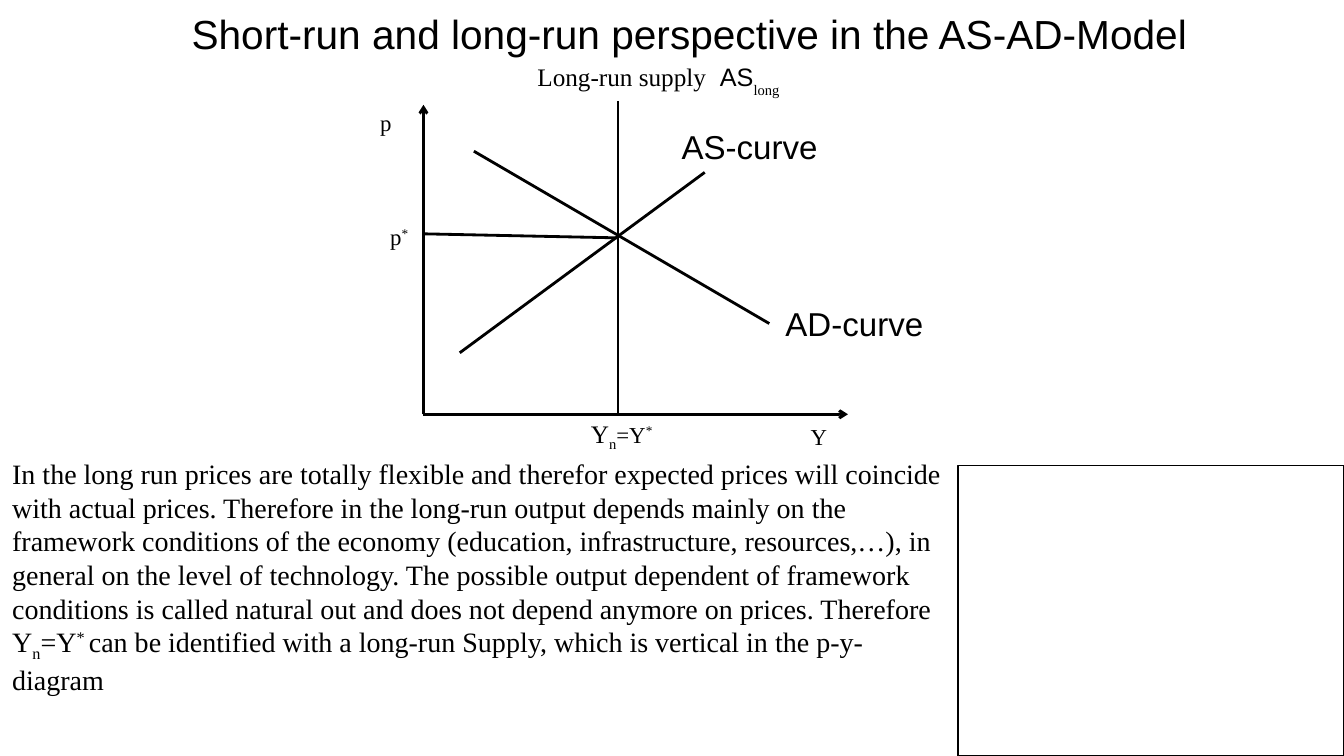
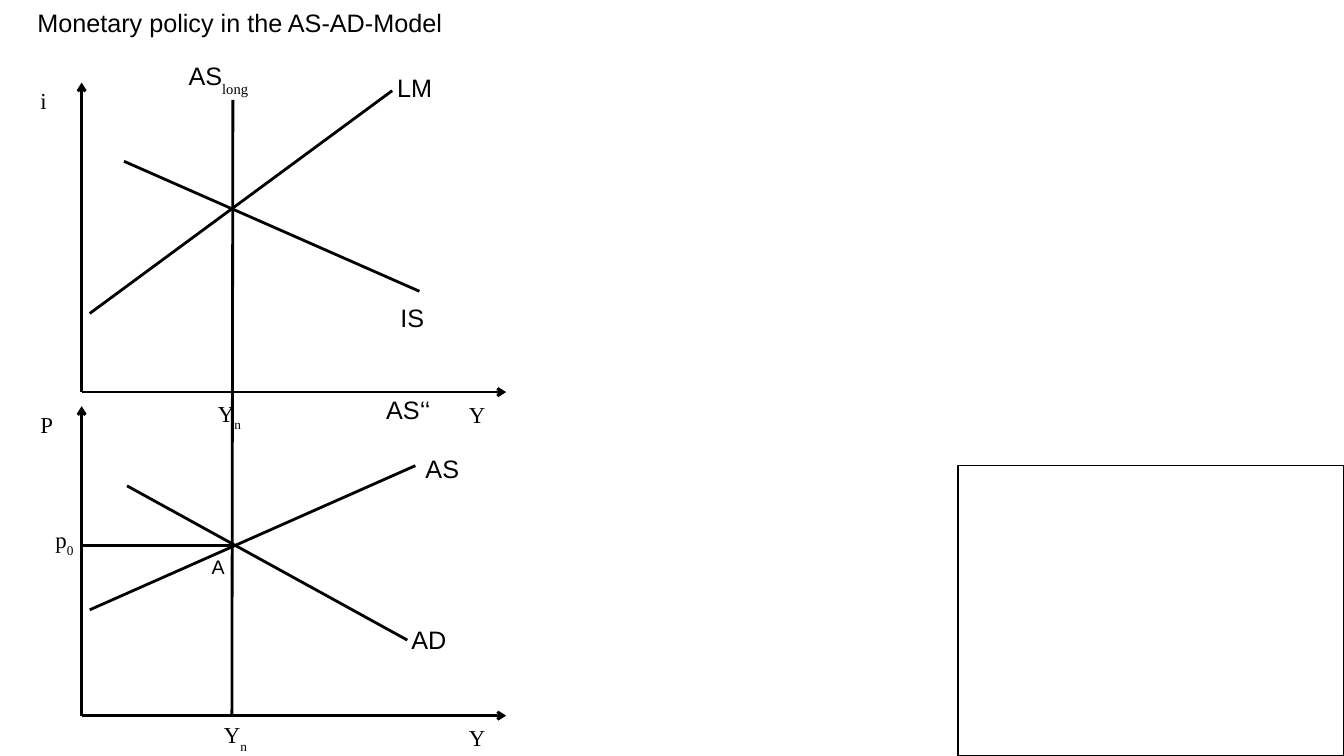
"""Builds two slides of AS-AD diagrams with long-run supply and monetary policy."""
from lxml.etree import SubElement
from pptx import Presentation
from pptx.dml.color import RGBColor
from pptx.enum.shapes import MSO_CONNECTOR, MSO_SHAPE
from pptx.enum.text import MSO_ANCHOR, MSO_AUTO_SIZE, PP_ALIGN
from pptx.oxml.ns import qn
from pptx.util import Inches, Pt

THEME = {
    "ink": RGBColor(0, 0, 0),
    "hairline": 0,
    "frame line": 1,
    "inset": (0.09, 0.04),
    "styles": {
        "title": ("Arial", 29),
        "subtitle": ("Arial", 18),
        "body": ("Times New Roman", 20),
        "axis": ("Times New Roman", 16.3),
        "note": ("Times New Roman", 18),
        "curve": ("Arial", 18),
        "large curve": ("Arial", 23.6),
        "point": ("Arial", 14),
    },
}
WIDTH, HEIGHT = 13.33, 7.5
FRAME = (9.5, 4.62, 3.83, 2.88)
AXIS_WIDTH, AXIS_HEIGHT = 4.21, 3.07
TITLE_ONLY, TITLE_AND_BODY = 5, 1

AS_LONG = [("AS", 0), ("long", -33, "note")]
NATURAL_OUTPUT = [("Y", 0), ("n", -33)]

SLIDES = [
    {
        "title": ("Short-run and long-run perspective in the AS-AD-Model", "title", (1.81, 0.05, 10.16)),
        "body": (
            [
                (
                    "In the long run prices are totally flexible and therefor expected prices will "
                    "coincide with actual prices. Therefore in the long-run output depends mainly on "
                    "the framework conditions of the economy (education, infrastructure, "
                    "resources,…), in general on the level of technology. The possible output "
                    "dependent of framework conditions is called natural out and does not depend "
                    "anymore on prices. Therefore Y", 0,
                ),
                ("n", -25), ("=Y", 0), ("* ", 33),
                ("can be identified with a long-run Supply, which is vertical in the p-y-diagram", 0),
            ],
            (0.03, 4.49, 9.48, 2.32),
        ),
        "diagrams": [
            {
                "origin": (4.2, 4.11),
                "vertical": ("p", -0.52, 0.29),
                "curves": [
                    ((0.36, 0.61), (2.79, 2.4)),
                    ((3.43, 0.9), (0.5, 2.61)),
                    ((1.93, 1.75), (0, 1.79)),
                    ((1.93, 3.11), (1.93, 0)),
                ],
                "labels": [
                    ([("Y", 0, "note"), ("n", -25, "note"), ("=Y", 0), ("*", 33)], "axis", 1.57, 0, 0.82),
                    ([("p", 0), ("*", 33)], "axis", -0.42, 1.94, 0.37),
                    ("AS-curve", "large curve", 2.47, 2.9, 1.54),
                    ("AD-curve", "large curve", 3.5, 1.14, 1.56),
                    ("Long-run supply", "note", 1.04, 3.54, 1.88),
                    (AS_LONG, "curve", 2.85, 3.54, 0.82),
                ],
            },
        ],
    },
    {
        "title": ("Monetary policy in the AS-AD-Model", "subtitle", (0.28, 0.03, 4.29)),
        "diagrams": [
            {
                "origin": (0.81, 3.89),
                "vertical": ("i", -0.5, 0.24),
                "curves": [((0.42, 2.29), (3.35, 1)), ((0.08, 0.78), (3.08, 2.99))],
                "labels": [
                    ("LM", "curve", 3.04, 3.21, 0.53),
                    ("IS", "curve", 3.07, 0.93, 0.42),
                    (NATURAL_OUTPUT, "axis", 1.26, -0.03, 0.42),
                    (AS_LONG, "curve", 0.97, 3.33, 0.82),
                    ("AS‘‘", "curve", 2.93, 0.02, 0.62),
                ],
            },
            {
                "origin": (0.81, 7.1),
                "vertical": ("P", -0.5, 0.31),
                "curves": [
                    ((0.45, 2.28), (3.23, 0.75)),
                    ((0.08, 1.05), (3.31, 2.48)),
                    ((1.49, 1.69), (0, 1.69)),
                    ((1.5, 6.11), (1.49, 0)),
                ],
                "labels": [
                    ([("p", 0), ("0", -33)], "axis", -0.35, 1.93, 0.37),
                    ("AD", "curve", 3.18, 0.95, 0.53),
                    ("AS", "curve", 3.32, 2.64, 0.52),
                    (NATURAL_OUTPUT, "axis", 1.32, -0.01, 0.42),
                    ("A", "point", 1.2, 1.63, 0.31),
                ],
            },
        ],
    },
]


def write_text(shape, text, style="body", wrap=False):
    """Fill a shape with one paragraph of plain text or (text, baseline, style) runs."""
    frame = shape.text_frame
    frame.word_wrap = wrap
    frame.auto_size = MSO_AUTO_SIZE.NONE if wrap else MSO_AUTO_SIZE.SHAPE_TO_FIT_TEXT
    frame.vertical_anchor = MSO_ANCHOR.TOP
    side, edge = map(Inches, THEME["inset"])
    frame.margin_left = frame.margin_right = side
    frame.margin_top = frame.margin_bottom = edge
    paragraph = frame.paragraphs[0]
    paragraph.alignment = PP_ALIGN.LEFT
    paragraph.space_before = Pt(0)
    for part, baseline, *own_style in [(text, 0)] if isinstance(text, str) else text:
        run = paragraph.add_run()
        run.text = part
        name, size = THEME["styles"][own_style[0] if own_style else style]
        run.font.name, run.font.size = name, Pt(size)
        run.font.color.rgb = THEME["ink"]
        if baseline:
            run.font._element.set("baseline", str(baseline * 1000))
    return paragraph


def line_height(style):
    """Return the height in inches of a one-line box in a text style."""
    return THEME["styles"][style][1] * 1.2 / 72 + 2 * THEME["inset"][1]


def place(shape, left, top, width, height):
    """Move and size a placeholder in inches."""
    shape.left, shape.top = Inches(left), Inches(top)
    shape.width, shape.height = Inches(width), Inches(height)


def add_label(slide, text, style, left, top, width):
    """Add a one-line label."""
    box = (left, top, width, line_height(style))
    write_text(slide.shapes.add_textbox(*map(Inches, box)), text, style)


def add_line(slide, start, end, arrow=False):
    """Add a hairline, with an open arrowhead for an axis."""
    connector = slide.shapes.add_connector(MSO_CONNECTOR.STRAIGHT, *map(Inches, start + end))
    connector.line.color.rgb = THEME["ink"]
    connector.line.width = Pt(THEME["hairline"])
    properties = connector._element.spPr
    if arrow:
        SubElement(properties.find(qn("a:ln")), qn("a:tailEnd"), type="arrow")
    SubElement(properties, qn("a:effectLst"))


def add_diagram(slide, diagram):
    """Draw axes, curves and labels measured right and up from the origin."""
    left, bottom = diagram["origin"]

    def point(x, y):
        return left + x, bottom - y

    for end in ((0, AXIS_HEIGHT), (AXIS_WIDTH, 0)):
        add_line(slide, point(0, 0), point(*end), arrow=True)
    for start, end in diagram["curves"]:
        add_line(slide, point(*start), point(*end))
    name, offset, name_width = diagram["vertical"]
    axis_labels = [
        (name, "axis", offset, AXIS_HEIGHT, name_width),
        ("Y", "axis", 3.75, -0.04, 0.35),
    ]
    for text, style, x, y, width in axis_labels + diagram["labels"]:
        add_label(slide, text, style, *point(x, y), width)


def add_frame(slide):
    """Add the empty frame in the lower right corner."""
    frame = slide.shapes.add_shape(MSO_SHAPE.RECTANGLE, *map(Inches, FRAME))
    frame.shadow.inherit = False
    frame.fill.background()
    frame.line.color.rgb = THEME["ink"]
    frame.line.width = Pt(THEME["frame line"])


def add_slide(presentation, content):
    """Add one slide with its title, optional body, diagrams and frame."""
    layout = TITLE_AND_BODY if "body" in content else TITLE_ONLY
    slide = presentation.slides.add_slide(presentation.slide_layouts[layout])
    title, style, box = content["title"]
    place(slide.shapes.title, *box, line_height(style))
    write_text(slide.shapes.title, title, style)
    if "body" in content:
        text, box = content["body"]
        body = slide.placeholders[1]
        place(body, *box)
        properties = write_text(body, text, wrap=True)._p.get_or_add_pPr()
        properties.set("marL", "0")
        properties.set("indent", "0")
        SubElement(properties, qn("a:buNone"))
    for diagram in content["diagrams"]:
        add_diagram(slide, diagram)
    add_frame(slide)


def main():
    """Build and save the presentation."""
    presentation = Presentation()
    presentation.slide_width, presentation.slide_height = Inches(WIDTH), Inches(HEIGHT)
    for content in SLIDES:
        add_slide(presentation, content)
    presentation.save("out.pptx")


if __name__ == "__main__":
    main()
